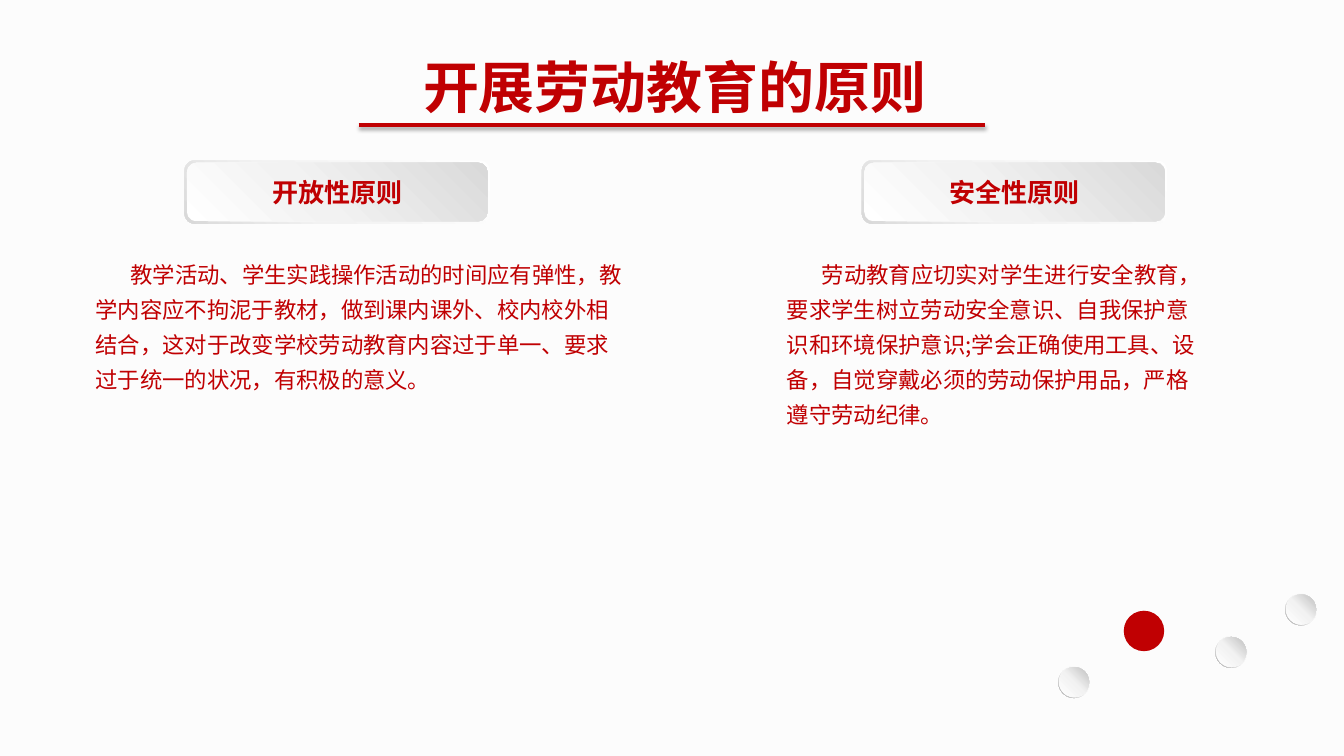
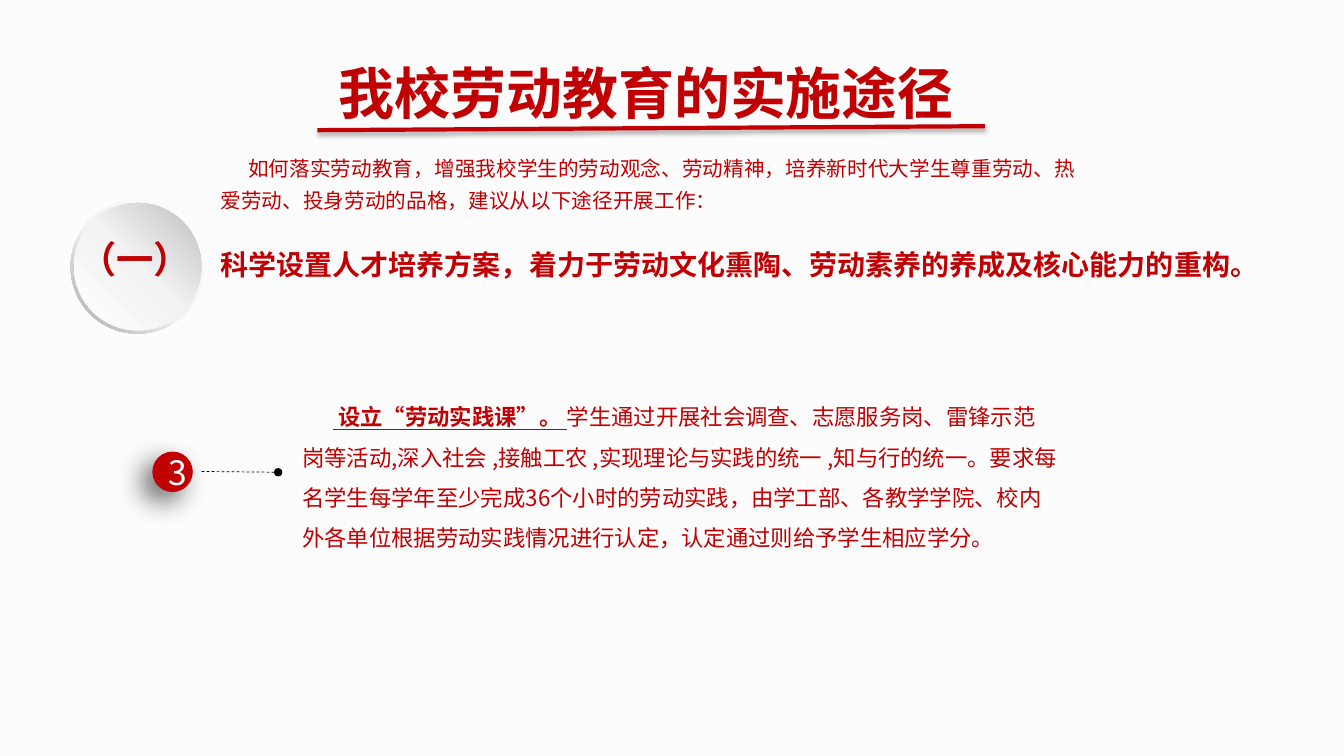
from lxml.etree import SubElement
from pptx import Presentation
from pptx.dml.color import RGBColor
from pptx.enum.dml import MSO_LINE
from pptx.enum.shapes import MSO_CONNECTOR, MSO_SHAPE
from pptx.enum.text import MSO_ANCHOR, MSO_AUTO_SIZE, PP_ALIGN
from pptx.oxml.ns import qn
from pptx.util import Cm, Pt

FONT = "Noto Sans CJK SC"
RED = RGBColor(0xC0, 0x00, 0x02)
BLACK = RGBColor(0x00, 0x00, 0x00)
WHITE = RGBColor(0xFF, 0xFF, 0xFF)
PAPER = RGBColor(0xFC, 0xFC, 0xFC)
PALE = RGBColor(0xF2, 0xF2, 0xF2)
SILVER = RGBColor(0xD9, 0xD9, 0xD9)
GREY = RGBColor(0xBF, 0xBF, 0xBF)
DARK_GREY = RGBColor(0xA6, 0xA6, 0xA6)

PILL_RIM = (135, [(0, WHITE), (62, PALE), (100, SILVER)])
PILL_FACE = (315, [(0, WHITE), (42, PALE), (100, SILVER)])
BALL_RIM = (135, [(0, WHITE), (55, PALE), (100, DARK_GREY)])
BALL_FACE = (315, [(0, WHITE), (51, PALE), (100, GREY)])

PRINCIPLES = [
    (4.65, 2.16, 13.9, "开放性原则",
     "教学活动、学生实践操作活动的时间应有弹性，教学内容应不拘泥于教材，做到课内课外、"
     "校内校外相结合，这对于改变学校劳动教育内容过于单一、要求过于统一的状况，有积极的意义。"),
    (21.72, 19.58, 11.05, "安全性原则",
     "劳动教育应切实对学生进行安全教育，要求学生树立劳动安全意识、自我保护意识和环境保护意识;"
     "学会正确使用工具、设备，自觉穿戴必须的劳动保护用品，严格遵守劳动纪律。"),
]
INTRO = ("如何落实劳动教育，增强我校学生的劳动观念、劳动精神，培养新时代大学生尊重劳动、"
         "热爱劳动、投身劳动的品格，建议从以下途径开展工作：")
PATHWAY = "科学设置人才培养方案，着力于劳动文化熏陶、劳动素养的养成及核心能力的重构。"
COURSE = " 设立“劳动实践课”。 "
COURSE_DETAIL = (
    "学生通过开展社会调查、志愿服务岗、雷锋示范岗等活动,深入社会 ,接触工农 ,"
    "实现理论与实践的统一 ,知与行的统一。要求每名学生每学年至少完成36个小时的劳动实践，"
    "由学工部、各教学学院、校内外各单位根据劳动实践情况进行认定，认定通过则给予学生相应学分。")


class Deck:
    """Holds the shared style and the slide being built."""

    def __init__(self):
        self.prs = Presentation()
        self.prs.slide_width, self.prs.slide_height = Cm(33.87), Cm(19.05)
        backdrop = self.prs.slide_master.background.fill
        backdrop.solid()
        backdrop.fore_color.rgb = PAPER
        self.slide = None

    def start_slide(self, title, left, top, width):
        self.slide = self.prs.slides.add_slide(self.prs.slide_layouts[5])
        heading = self.slide.shapes.title
        heading.left, heading.top = Cm(left), Cm(top)
        heading.width, heading.height = Cm(width), Cm(1.96)
        frame = heading.text_frame
        frame.text = title
        frame.auto_size = MSO_AUTO_SIZE.NONE
        frame.vertical_anchor = MSO_ANCHOR.TOP
        self.style(frame.paragraphs[0], 40, bold=True, align=PP_ALIGN.CENTER)

    def style(self, paragraph, size, color=RED, bold=False, align=PP_ALIGN.LEFT):
        paragraph.alignment = align
        for run in paragraph.runs:
            run.font.size, run.font.bold = Pt(size), bold
            run.font.color.rgb = color
            run.font.name = FONT
            SubElement(run.font._element, qn("a:ea"), typeface=FONT)

    def text(self, box, content, size, bold=False, spacing=None, indent=0,
             wrap=True, margin=None, lead=None):
        shape = self.slide.shapes.add_textbox(*map(Cm, box))
        frame = shape.text_frame
        frame.word_wrap = wrap
        if margin is not None:
            frame.margin_left = frame.margin_right = Cm(margin)
            frame.margin_top = frame.margin_bottom = Cm(margin)
        paragraph = frame.paragraphs[0]
        paragraph.text = lead or content
        if lead:
            paragraph.add_run().text = content
        if spacing:
            paragraph.line_spacing = spacing
        if indent:
            paragraph._p.get_or_add_pPr().set("indent", str(Cm(indent)))
        self.style(paragraph, size, bold=bold)
        if lead:
            paragraph.runs[0].font.bold = paragraph.runs[0].font.underline = True

    def shape(self, preset, left, top, width, height):
        shape = self.slide.shapes.add_shape(
            preset, Cm(left), Cm(top), Cm(width), Cm(height))
        shape.line.fill.background()
        shape.shadow.inherit = False
        return shape

    def gradient(self, shape, look):
        angle, colors = look
        shape.fill.gradient()
        shape.fill.gradient_angle = 360 - angle
        stops = shape._element.spPr.find(".//" + qn("a:gsLst"))
        stops.clear()
        for position, color in colors:
            stop = SubElement(stops, qn("a:gs"), pos=str(position * 1000))
            SubElement(stop, qn("a:srgbClr"), val=str(color))

    def cast_shadow(self, effects, alpha, blur, distance, angle):
        shadow = SubElement(effects, qn("a:outerShdw"), blurRad=str(Pt(blur)),
                            dist=str(Pt(distance)), dir=str(angle * 60000),
                            algn="ctr", rotWithShape="0")
        color = SubElement(shadow, qn("a:srgbClr"), val=str(BLACK))
        SubElement(color, qn("a:alpha"), val=str(alpha * 1000))

    def pill(self, left, top, label):
        width, height, rim = 7.7, 1.6, 0.06
        outer = self.shape(MSO_SHAPE.ROUNDED_RECTANGLE, left, top, width, height)
        self.gradient(outer, PILL_RIM)
        face = self.shape(MSO_SHAPE.ROUNDED_RECTANGLE, left + rim, top + rim,
                          width - 2 * rim, height - 2 * rim)
        self.gradient(face, PILL_FACE)
        face.text_frame.text = label
        self.style(face.text_frame.paragraphs[0], 18.6, bold=True, align=PP_ALIGN.CENTER)

    def ball(self, left, top, size):
        rim = size * 0.025
        ring = self.shape(MSO_SHAPE.DONUT, left, top, size, size)
        ring.adjustments[0] = 0.05
        self.gradient(ring, BALL_RIM)
        face = self.shape(MSO_SHAPE.OVAL, left + rim, top + rim,
                          size - 2 * rim, size - 2 * rim)
        self.gradient(face, BALL_FACE)

    def red_dot(self, left, top, number=None):
        dot = self.shape(MSO_SHAPE.OVAL, left, top, 1.02, 1.02)
        dot.fill.solid()
        dot.fill.fore_color.rgb = RED
        if number:
            dot.text_frame.text = number
            self.style(dot.text_frame.paragraphs[0], 24, WHITE, align=PP_ALIGN.CENTER)
            self.cast_shadow(dot._element.spPr.find(qn("a:effectLst")), 60, 20, 10, 135)

    def line(self, start, end, color, width):
        line = self.slide.shapes.add_connector(
            MSO_CONNECTOR.STRAIGHT, *map(Cm, start + end))
        line.line.color.rgb, line.line.width = color, Pt(width)
        return line, SubElement(line._element.spPr, qn("a:effectLst"))

    def title_rule(self, start, end):
        effects = self.line(start, end, RED, 3)[1]
        self.cast_shadow(effects, 35, 3.1, 1.8, 90)

    def leader(self, start, end):
        leader = self.line(start, end, BLACK, 0.5)[0]
        leader.line.dash_style = MSO_LINE.DASH
        SubElement(leader.line._ln, qn("a:tailEnd"), type="oval")


def build_principles(deck):
    deck.start_slide("开展劳动教育的原则", 8.43, 1.19, 17.15)
    deck.title_rule((9.04, 3.15), (24.82, 3.15))
    for pill_left, body_left, body_width, name, body in PRINCIPLES:
        deck.pill(pill_left, 4.04, name)
        deck.text((body_left, 6.25, body_width, 4.7), body, 16, spacing=1.3, indent=0.88)
    for left, top in [(32.39, 14.96), (30.63, 16.03), (26.67, 16.79)]:
        deck.ball(left, top, 0.8)
    deck.red_dot(28.32, 15.39)


def build_pathways(deck):
    deck.start_slide("我校劳动教育的实施途径", 7.75, 1.35, 17.07)
    deck.title_rule((8, 3.28), (24.82, 3.18))
    deck.text((5.31, 3.61, 22.25, 1.88), INTRO, 14.7, spacing=1.3, indent=0.7)
    deck.text((5.31, 6.25, 26.62, 0.97), PATHWAY, 20, bold=True,
              spacing=Pt(20), wrap=False)
    deck.ball(1.78, 5.03, 3.38)
    deck.text((1.75, 5.82, 3.33, 1.4), "（一）", 26.6, bold=True, wrap=False)
    deck.red_dot(3.84, 11.38, "3")
    deck.leader((5.08, 11.88), (7.01, 11.9))
    deck.text((7.62, 9.83, 19.05, 4.11), COURSE_DETAIL, 16, spacing=1.5,
              indent=0.78, margin=0, lead=COURSE)


def main():
    deck = Deck()
    build_principles(deck)
    build_pathways(deck)
    deck.prs.save("out.pptx")


if __name__ == "__main__":
    main()
